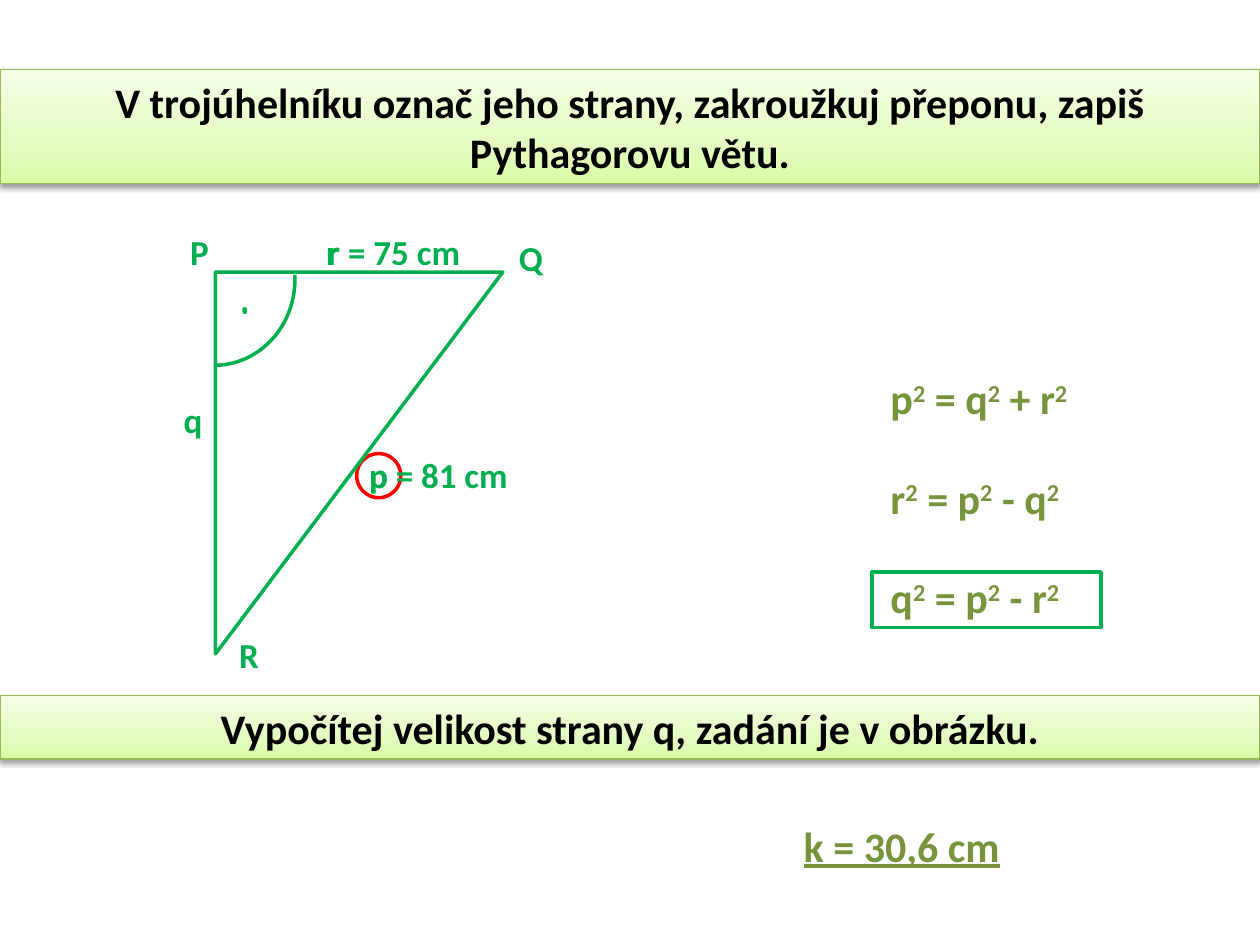
from lxml.etree import fromstring
from pptx import Presentation
from pptx.dml.color import RGBColor as RGB
from pptx.enum.shapes import MSO_SHAPE as Shape
from pptx.enum.text import MSO_ANCHOR as Anchor, MSO_AUTO_SIZE as Auto, PP_ALIGN as Align
from pptx.util import Pt

WIDE, HIGH = 720, 540
FONT = "Calibri"
COLORS = {
    "green": "00B050", "olive": "77933C", "red": "FF0000", "black": "000000",
    "white": "FFFFFF", "edge": "98B955",
    "deep": "DAFDA7", "mid": "E4FCC2", "pale": "F5FFE7",
}

TASK = "V trojúhelníku označ jeho strany, zakroužkuj přeponu, zapiš Pythagorovu větu."
NEXT = "Vypočítej velikost strany q, zadání je v obrázku."
LABELS = [  # text, left, top, width
    ("Q", 289.4, 131.8, 35.3),
    ("R", 129.6, 358.6, 35.3),
    ("P", 101.5, 128.2, 35.3),
    ("p", 203.8, 255.6, 35.3),
    ("q", 97.9, 223.9, 35.3),
    ("r", 179.3, 128.2, 35.3),
    ("p = 81 cm", 203.8, 255.6, 154.8),
    (" r = 75 cm", 175.7, 128.2, 162),
]
RULES = ["p2 = q2 + r2", "r2 = p2 - q2", "q2 = p2 - r2"]
RULE_TOP, RULE_STEP = 209.5, 56.9
ANSWER = "k = 30,6 cm"

NS = 'xmlns:a="http://schemas.openxmlformats.org/drawingml/2006/main"'
STOPS = "".join(
    f'<a:gs pos="{pos}"><a:srgbClr val="{COLORS[name]}"/></a:gs>'
    for pos, name in [(0, "deep"), (35000, "mid"), (100000, "pale")])
GRAD = (f'<a:gradFill {NS} rotWithShape="1"><a:gsLst>{STOPS}</a:gsLst>'
        '<a:lin ang="16200000" scaled="1"/></a:gradFill>')
SHADOW = (f'<a:effectLst {NS}><a:outerShdw blurRad="{Pt(3.1)}" dist="{Pt(1.6)}" '
          f'dir="5400000" rotWithShape="0"><a:srgbClr val="{COLORS["black"]}">'
          '<a:alpha val="38000"/></a:srgbClr></a:outerShdw></a:effectLst>')


def color(name):
    return RGB.from_string(COLORS[name])


def style(frame, size, name):
    frame.word_wrap = True
    frame.auto_size = Auto.SHAPE_TO_FIT_TEXT
    for run in frame.paragraphs[0].runs:
        font = run.font
        font.name, font.size, font.bold = FONT, Pt(size), True
        font.color.rgb = color(name)


def add_shape(kind, box, line="green", fill="white"):
    shape = slide.shapes.add_shape(kind, *map(Pt, box))
    shape.shadow.inherit = False
    if fill:
        shape.fill.solid()
        shape.fill.fore_color.rgb = color(fill)
    else:
        shape.fill.background()
    shape.line.color.rgb = color(line)
    shape.line.width = Pt(2)
    return shape


def add_text(text, box, size, name):
    """Add a text box in which each digit 2 after a letter is raised."""
    frame = slide.shapes.add_textbox(*map(Pt, box)).text_frame
    par = frame.paragraphs[0]
    if text in RULES:
        parts = text.split("2")
        for part in parts[:-1]:
            par.add_run().text = part
            power = par.add_run()
            power.text = "2"
            power.font._element.set("baseline", "30000")
    else:
        par.text = text
    style(frame, size, name)
    return par


def format_banner(shape, text, top, height):
    shape.left, shape.top, shape.width, shape.height = map(Pt, (0, top, WIDE, height))
    props = shape._element.spPr
    props.append(fromstring(GRAD))
    shape.line.color.rgb = color("edge")
    shape.line.width = Pt(0.75)
    props.append(fromstring(SHADOW))
    frame = shape.text_frame
    frame.text = text
    frame.vertical_anchor = Anchor.MIDDLE
    frame.paragraphs[0].alignment = Align.CENTER
    style(frame, 24, "black")


deck = Presentation()
deck.slide_width, deck.slide_height = Pt(WIDE), Pt(HIGH)
slide = deck.slides.add_slide(deck.slide_layouts[5])

format_banner(slide.shapes.title, TASK, 39.6, 65.4)
format_banner(slide.shapes.add_shape(Shape.RECTANGLE, 0, 0, 0, 0), NEXT, 397.4, 36.4)

add_shape(Shape.RECTANGLE, (498.2, 326.9, 131, 31.7))
add_shape(Shape.OVAL, (203.8, 259.2, 25.2, 25.2), "red")

arc = add_shape(Shape.ARC, (76.3, 110.9, 92.2, 97.9))
arc.adjustments[0], arc.adjustments[1] = 213.92, 54
add_shape(Shape.OVAL, (139.5, 176.4, 0.7, 2.2))
corner = add_shape(Shape.RIGHT_TRIANGLE, (123.1, 155.5, 164.2, 218.2), fill=None)
corner._element.spPr.xfrm.set("flipV", "1")

for text, left, top, width in LABELS:
    add_text(text, (left, top, width, 31.5), 20, "green")
for row, text in enumerate(RULES):
    add_text(text, (501.8, RULE_TOP + row * RULE_STEP, 149, 36.4), 24, "olive")
answer = add_text(ANSWER, (452.2, 465.1, 149, 36.4), 24, "olive")
answer.runs[0].font.underline = True

deck.save("out.pptx")
